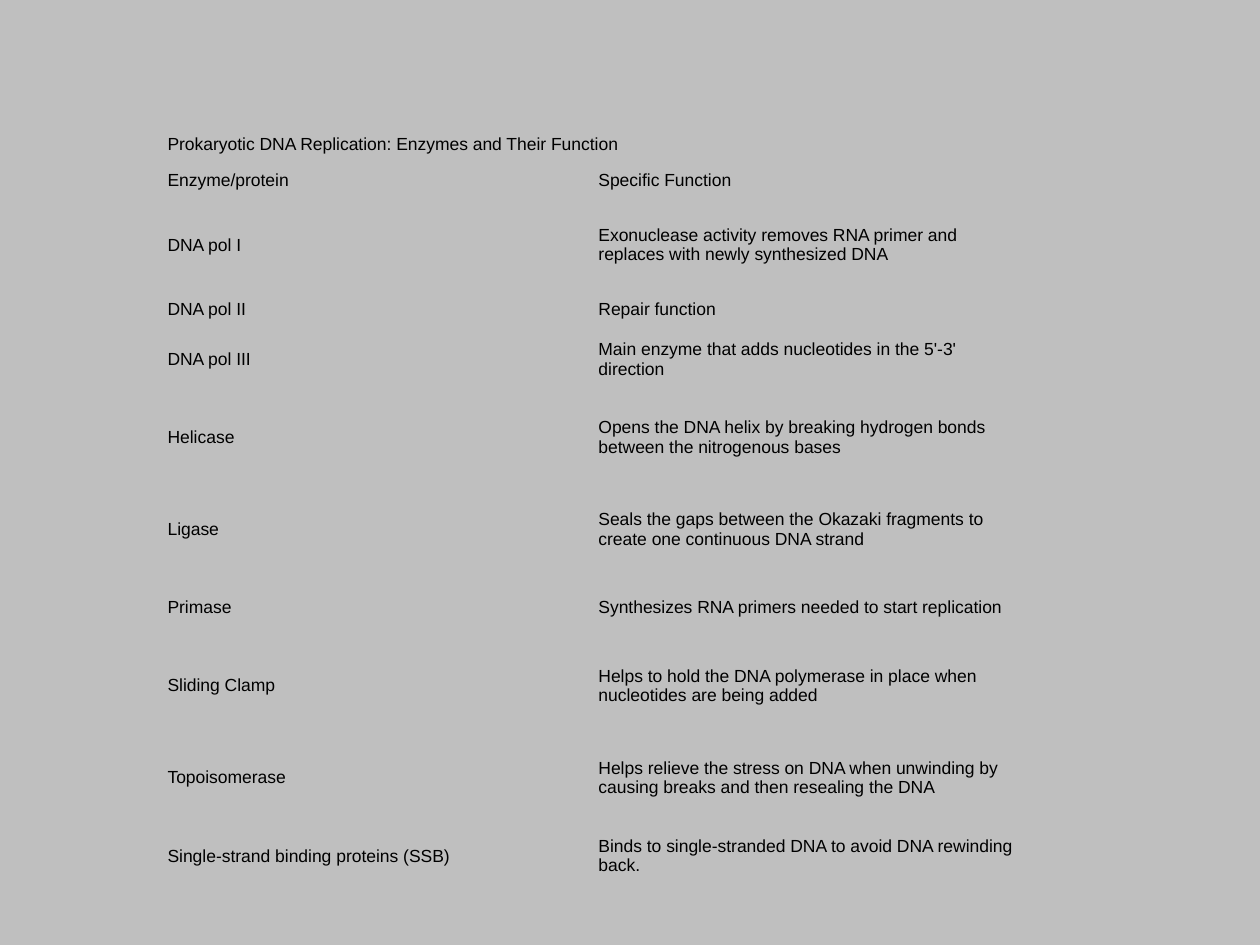
from pptx import Presentation
from pptx.dml.color import RGBColor
from pptx.enum.text import MSO_ANCHOR
from pptx.oxml.ns import qn
from pptx.util import Inches, Pt

TITLE = "Prokaryotic DNA Replication: Enzymes and Their Function"
SHORT, MEDIUM, TALL = 0.29, 0.51, 0.73
ENZYMES = [  # row height, enzyme, function
    (SHORT, "Enzyme/protein", "Specific Function"),
    (TALL, "DNA pol I", "Exonuclease activity removes RNA primer and replaces with newly synthesized DNA"),
    (SHORT, "DNA pol II", "Repair function"),
    (MEDIUM, "DNA pol III", "Main enzyme that adds nucleotides in the 5'-3' direction"),
    (TALL, "Helicase", "Opens the DNA helix by breaking hydrogen bonds between the nitrogenous bases"),
    (TALL, "Ligase", "Seals the gaps between the Okazaki fragments to create one continuous DNA strand"),
    (MEDIUM, "Primase", "Synthesizes RNA primers needed to start replication"),
    (TALL, "Sliding Clamp", "Helps to hold the DNA polymerase in place when nucleotides are being added"),
    (TALL, "Topoisomerase",
     "Helps relieve the stress on DNA when unwinding by causing breaks and then resealing the DNA"),
    (MEDIUM, "Single-strand binding proteins (SSB)",
     "Binds to single-stranded DNA to avoid DNA rewinding back."),
]
LEFT, TOP, COLUMN_WIDTH = 1.27, 1, 3.42
NO_STYLE_NO_GRID = "{2D5ABB26-0587-4C30-8999-92F81FD0307C}"


def color(value):
    return RGBColor.from_string(value)


def write(cell, text, size=10, font="Arial", ink="000000"):
    cell.fill.background()
    cell.vertical_anchor = MSO_ANCHOR.MIDDLE
    cell.margin_left = cell.margin_right = Inches(0.06)
    cell.margin_top = cell.margin_bottom = Inches(0.03)
    span = cell.text_frame.paragraphs[0].add_run()
    span.text = text
    span.font.size = Pt(size)
    span.font.name = font
    span.font.color.rgb = color(ink)


def add_enzyme_table(page):
    heights = [SHORT] + [height for height, *_ in ENZYMES]
    frame = page.shapes.add_table(
        len(heights), 2, Inches(LEFT), Inches(TOP),
        Inches(2 * COLUMN_WIDTH), Inches(sum(heights)))
    table = frame.table
    table.first_row = table.horz_banding = False
    frame._element.find(".//" + qn("a:tableStyleId")).text = NO_STYLE_NO_GRID
    for column in table.columns:
        column.width = Inches(COLUMN_WIDTH)
    for row, height in zip(table.rows, heights):
        row.height = Inches(height)

    table.cell(0, 0).merge(table.cell(0, 1))
    write(table.cell(0, 0), TITLE)
    for row, (_, *texts) in enumerate(ENZYMES, start=1):
        for column, text in enumerate(texts):
            write(table.cell(row, column), text)


def main():
    deck = Presentation()
    deck.slide_width, deck.slide_height = Inches(10), Inches(7.5)
    page = deck.slides.add_slide(deck.slide_layouts[6])
    page.background.fill.solid()
    page.background.fill.fore_color.rgb = color("BFBFBF")
    add_enzyme_table(page)
    deck.save("out.pptx")


if __name__ == "__main__":
    main()
